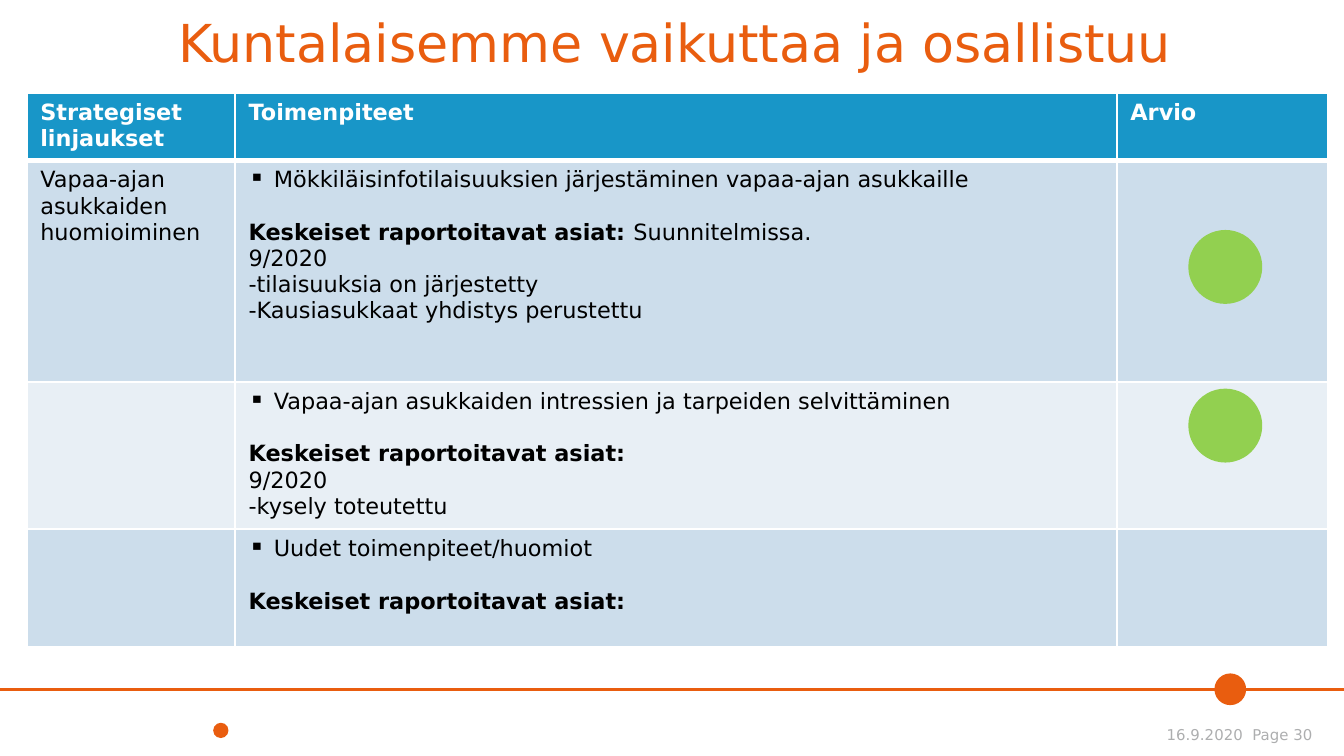
from lxml import etree
from pptx import Presentation
from pptx.dml.color import RGBColor
from pptx.enum.shapes import MSO_CONNECTOR, MSO_SHAPE
from pptx.enum.text import MSO_ANCHOR, PP_ALIGN
from pptx.oxml.ns import qn
from pptx.util import Pt

STRAIGHT = MSO_CONNECTOR.STRAIGHT
ELLIPSE = MSO_SHAPE.OVAL
BOTTOM = MSO_ANCHOR.BOTTOM
CENTER, RIGHT = PP_ALIGN.CENTER, PP_ALIGN.RIGHT
FONT = "DejaVu Sans"
COLORS = {
    "orange": "E95D0F", "gray": "ADAEAF", "blue": "1896C8", "white": "FFFFFF",
    "black": "000000", "dark_band": "CCDDEB", "light_band": "E8EFF5",
    "green": "92D050",
}
HEADING = "Keskeiset raportoitavat asiat:"
HEADERS = ["Strategiset linjaukset", "Toimenpiteet", "Arvio"]
ROWS = [
    ("Vapaa-ajan asukkaiden huomioiminen",
     "Mökkiläisinfotilaisuuksien järjestäminen vapaa-ajan asukkaille",
     "Suunnitelmissa.",
     ["9/2020", "-tilaisuuksia on järjestetty",
      "-Kausiasukkaat yhdistys perustettu"]),
    ("", "Vapaa-ajan asukkaiden intressien ja tarpeiden selvittäminen", "",
     ["9/2020", "-kysely toteutettu"]),
    ("", "Uudet toimenpiteet/huomiot", "", []),
]
COL_WIDTHS = [111.6, 472.4, 113.2]
ROW_HEIGHTS = [35.2, 118.8, 77.6, 63.2]


class SlideBuilder:
    """Draws styled elements on one slide, with lengths in points."""

    def __init__(self, prs):
        self.s = prs.slides.add_slide(prs.slide_layouts[5])

    def color(self, name):
        return RGBColor.from_string(COLORS[name])

    def run(self, p, text, size, color, bold=False):
        r = p.add_run()
        r.text = text
        r.font.name, r.font.size, r.font.bold = FONT, Pt(size), bold
        r.font.color.rgb = self.color(color)

    def text(self, sp, box, text, size, color, align):
        sp.left, sp.top, sp.width, sp.height = map(Pt, box)
        tf = sp.text_frame
        tf.margin_left = tf.margin_right = tf.margin_top = tf.margin_bottom = 0
        tf.word_wrap, tf.vertical_anchor = True, BOTTOM
        p = tf.paragraphs[0]
        p.alignment, p.line_spacing = align, 0.9
        self.run(p, text, size, color)

    def title(self, box, text):
        self.text(self.s.shapes.title, box, text, 28, "orange", CENTER)

    def footer(self, box, text):
        sp = self.s.shapes.add_textbox(*map(Pt, box))
        self.text(sp, box, text, 8, "gray", RIGHT)

    def line(self, x1, y1, x2, y2, color, width):
        sp = self.s.shapes.add_connector(STRAIGHT, *map(Pt, (x1, y1, x2, y2)))
        sp.line.color.rgb, sp.line.width = self.color(color), Pt(width)
        etree.SubElement(sp._element.spPr, qn("a:effectLst"))

    def dot(self, x, y, size, color):
        sp = self.s.shapes.add_shape(ELLIPSE, Pt(x), Pt(y), Pt(size), Pt(size))
        sp.shadow.inherit = False
        sp.fill.solid()
        sp.fill.fore_color.rgb = self.color(color)
        sp.line.fill.background()

    def table(self, x, y, widths, heights):
        frame = self.s.shapes.add_table(
            len(heights), len(widths), Pt(x), Pt(y),
            Pt(sum(widths)), Pt(sum(heights)))
        for col, width in zip(frame.table.columns, widths):
            col.width = Pt(width)
        for row, height in zip(frame.table.rows, heights):
            row.height = Pt(height)
        return frame.table

    def cell(self, cell, fill, top=1, bottom=1):
        tcPr = cell._tc.get_or_add_tcPr()
        for side, width in (("L", 1), ("R", 1), ("T", top), ("B", bottom)):
            ln = etree.SubElement(tcPr, qn(f"a:ln{side}"), w=str(Pt(width)))
            solid = etree.SubElement(ln, qn("a:solidFill"))
            etree.SubElement(solid, qn("a:srgbClr"), val=COLORS["white"])
        cell.fill.solid()
        cell.fill.fore_color.rgb = self.color(fill)
        return cell.text_frame

    def bullet(self, p, text):
        pPr = p._p.get_or_add_pPr()
        pPr.set("marL", str(Pt(13.5)))
        pPr.set("indent", str(-Pt(13.5)))
        etree.SubElement(pPr, qn("a:buChar"), char="▪")
        self.run(p, text, 12, "black")

    def actions(self, tf, action, status, notes):
        self.bullet(tf.paragraphs[0], action)
        p = tf.add_paragraph()
        p.space_before = Pt(14)
        self.run(p, HEADING + (" " if status else ""), 12, "black", True)
        if status:
            self.run(p, status, 12, "black")
        for note in notes:
            self.run(tf.add_paragraph(), note, 12, "black")


def main():
    prs = Presentation()
    prs.slide_width, prs.slide_height = Pt(720), Pt(405)
    b = SlideBuilder(prs)
    b.line(0, 369.2, 720, 369.2, "orange", 1.5)
    b.footer((452.9, 383.8, 250.4, 14.4), "16.9.2020  Page 30")
    b.dot(650.6, 360.8, 17, "orange")
    b.dot(114.2, 387.2, 8.2, "orange")
    b.title((2.9, 3, 717.1, 36.7), "Kuntalaisemme vaikuttaa ja osallistuu")

    table = b.table(14.4, 49.8, COL_WIDTHS, ROW_HEIGHTS)
    for col, header in enumerate(HEADERS):
        tf = b.cell(table.cell(0, col), "blue", bottom=3)
        b.run(tf.paragraphs[0], header, 12, "white", True)
    for row, (guideline, *actions) in enumerate(ROWS, 1):
        band = "dark_band" if row % 2 else "light_band"
        top = 3 if row == 1 else 1
        first, middle, _ = [b.cell(table.cell(row, col), band, top)
                            for col in range(len(HEADERS))]
        if guideline:
            b.run(first.paragraphs[0], guideline, 12, "black")
        b.actions(middle, *actions)

    for y in (123.2, 208.2):
        b.dot(636.6, y, 39.6, "green")
    prs.save("out.pptx")


if __name__ == "__main__":
    main()
